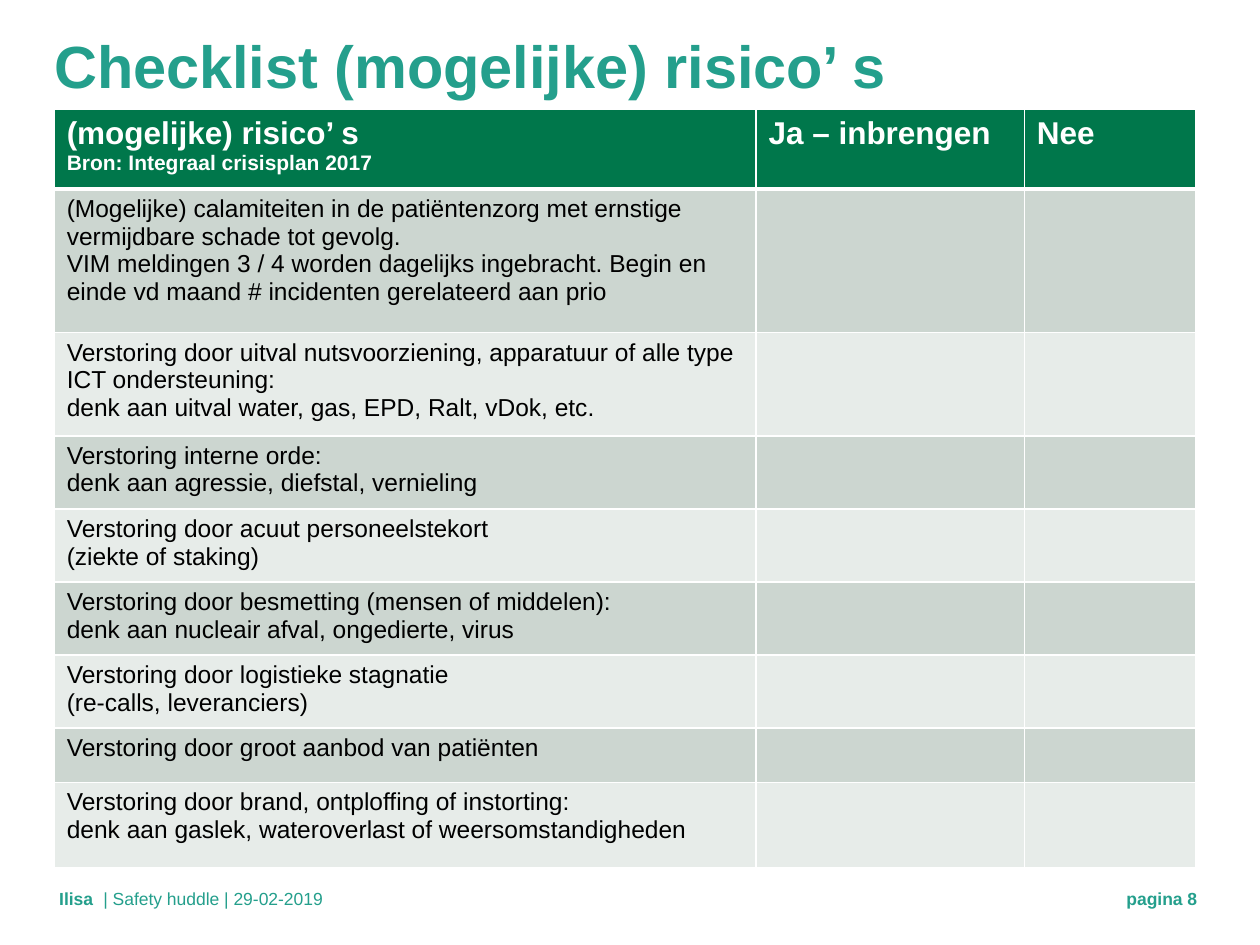
from pptx import Presentation
from pptx.dml.color import RGBColor
from pptx.enum.text import MSO_ANCHOR
from pptx.oxml.ns import qn
from pptx.util import Inches, Pt
from lxml.etree import SubElement

COLORS = {
    "teal": "249F8C",
    "header": "00774B",
    "band_dark": "CCD6D0",
    "band_light": "E7ECE9",
    "white": "FFFFFF",
    "black": "000000",
}
FONT = "Arial"
COLUMN_WIDTHS = [5.57, 2.13, 1.36]
ROW_HEIGHTS = [0.63, 1.14, 0.82, 0.58, 0.58, 0.58, 0.58, 0.43, 0.68]
HEADERS = [
    [("(mogelijke) risico’ s", 18), ("Bron: Integraal crisisplan 2017", 12)],
    [("Ja – inbrengen", 18)],
    [("Nee", 18)],
]
RISKS = [
    ["(Mogelijke) calamiteiten in de patiëntenzorg met ernstige vermijdbare schade tot gevolg.",
     "VIM meldingen 3 / 4 worden dagelijks ingebracht. Begin en einde vd maand # incidenten "
     "gerelateerd aan prio"],
    ["Verstoring door uitval nutsvoorziening, apparatuur of alle type ICT ondersteuning:",
     "denk aan uitval water, gas, EPD, Ralt, vDok, etc."],
    ["Verstoring interne orde:", "denk aan agressie, diefstal, vernieling"],
    ["Verstoring door acuut personeelstekort", "(ziekte of staking)"],
    ["Verstoring door besmetting (mensen of middelen):",
     "denk aan nucleair afval, ongedierte, virus"],
    ["Verstoring door logistieke stagnatie", "(re-calls, leveranciers)"],
    ["Verstoring door groot aanbod van patiënten"],
    ["Verstoring door brand, ontploffing of instorting:",
     "denk aan gaslek, wateroverlast of weersomstandigheden"],
]


def add_span(para, text, size, color, bold=False):
    span = para.add_run()
    span.text = text
    span.font.name = FONT
    span.font.size = Pt(size)
    span.font.bold = bold
    span.font.color.rgb = RGBColor.from_string(COLORS[color])


def add_line(page, text, left, top, width, height, size, spacing, bold=False):
    """Add a one-line text box without margins in the accent colour."""
    box = page.shapes.add_textbox(Inches(left), Inches(top), Inches(width), Inches(height))
    frame = box.text_frame
    frame.word_wrap = True
    frame.vertical_anchor = MSO_ANCHOR.MIDDLE
    frame.margin_left = frame.margin_right = frame.margin_top = frame.margin_bottom = 0
    para = frame.paragraphs[0]
    para.line_spacing = Pt(spacing)
    add_span(para, text, size, "teal", bold)


def set_borders(cell, top, bottom):
    """Draw white borders; top and bottom are widths in points."""
    properties = cell._tc.get_or_add_tcPr()
    for side, width in (("L", 1), ("R", 1), ("T", top), ("B", bottom)):
        line = SubElement(properties, qn(f"a:ln{side}"), w=str(Pt(width)))
        fill = SubElement(line, qn("a:solidFill"))
        SubElement(fill, qn("a:srgbClr"), val=COLORS["white"])


def fill_cell(cell, lines, fill, color, bold):
    """Fill a cell with one paragraph per (text, size) pair."""
    cell.fill.solid()
    cell.fill.fore_color.rgb = RGBColor.from_string(COLORS[fill])
    frame = cell.text_frame
    for index, (text, size) in enumerate(lines):
        para = frame.add_paragraph() if index else frame.paragraphs[0]
        add_span(para, text, size, color, bold)


def add_checklist(page):
    frame = page.shapes.add_table(
        len(ROW_HEIGHTS), len(COLUMN_WIDTHS), Inches(0.43), Inches(0.87),
        Inches(sum(COLUMN_WIDTHS)), Inches(sum(ROW_HEIGHTS)))
    table = frame.table
    for column, width in zip(table.columns, COLUMN_WIDTHS):
        column.width = Inches(width)
    for row, height in zip(table.rows, ROW_HEIGHTS):
        row.height = Inches(height)

    risk_rows = [[[(text, 14) for text in risk], [], []] for risk in RISKS]
    for r, contents in enumerate([HEADERS] + risk_rows):
        is_header = r == 0
        band = "header" if is_header else "band_dark" if r % 2 else "band_light"
        for c, lines in enumerate(contents):
            cell = table.cell(r, c)
            set_borders(cell, top=3 if r == 1 else 1, bottom=3 if is_header else 1)
            fill_cell(cell, lines, band, "white" if is_header else "black", is_header)


def main():
    deck = Presentation()
    deck.slide_width, deck.slide_height = Inches(10), Inches(7.5)
    page = deck.slides.add_slide(deck.slide_layouts[6])
    add_line(page, "Ilisa", 0.47, 7.05, 0.35, 0.17, 10, 12, bold=True)
    add_line(page, "Checklist (mogelijke) risico’ s", 0.43, 0.21, 9.06, 0.59, 34, 42.5, bold=True)
    add_line(page, "| Safety huddle | 29-02-2019", 0.82, 7.05, 5.91, 0.17, 10, 12)
    add_line(page, "pagina 8", 8.94, 7.05, 0.98, 0.17, 10, 12, bold=True)
    add_checklist(page)
    deck.save("out.pptx")


if __name__ == "__main__":
    main()
